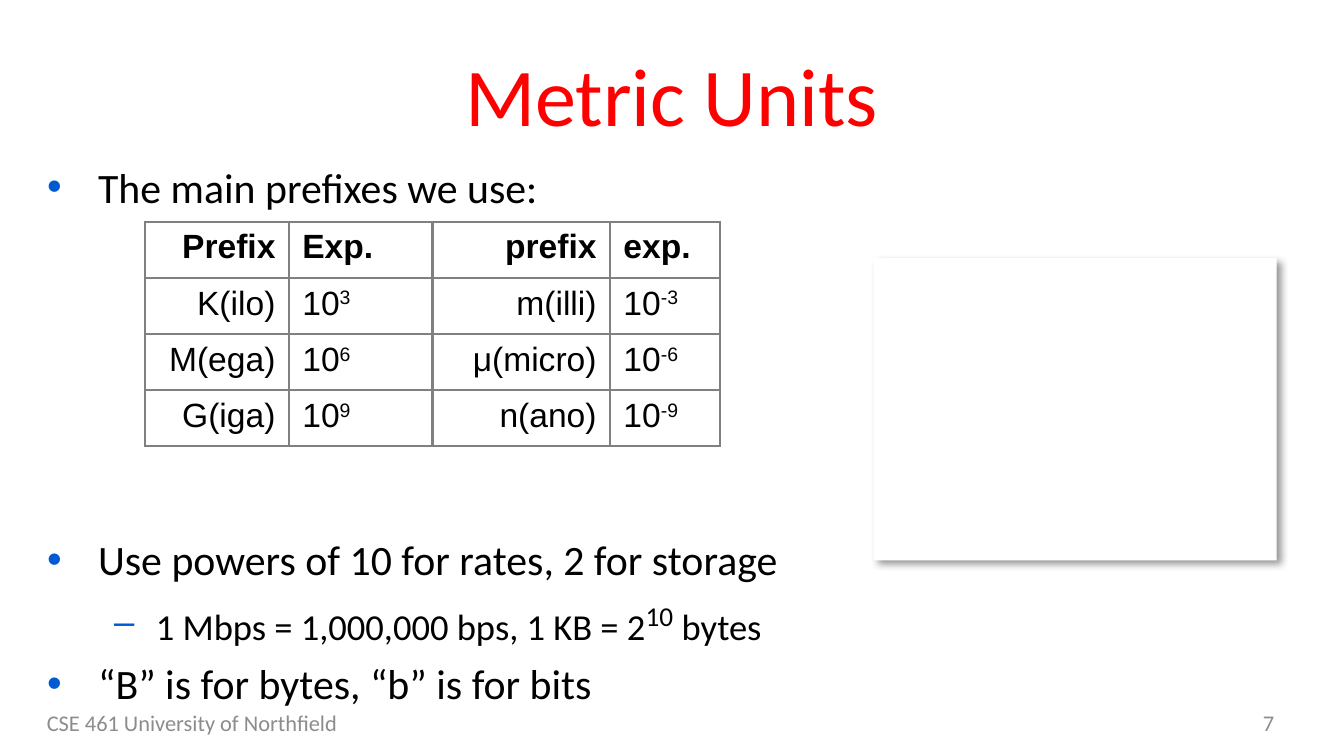
from lxml.etree import SubElement
from pptx import Presentation
from pptx.dml.color import RGBColor
from pptx.enum.shapes import MSO_SHAPE
from pptx.enum.text import MSO_ANCHOR, MSO_AUTO_SIZE, PP_ALIGN
from pptx.oxml import parse_xml
from pptx.oxml.ns import nsdecls, qn
from pptx.util import Inches, Pt


def color(hex_string):
    return RGBColor.from_string(hex_string)


def write(paragraph, text, size, font, hex_string, bold=False, raised_size=None):
    """Fill a paragraph; parts between ^ marks become superscript."""
    for index, part in enumerate(text.split("^")):
        if not part:
            continue
        raised = index % 2 == 1
        run = paragraph.add_run()
        run.text = part
        run.font.size = Pt(raised_size if raised and raised_size else size)
        run.font.name = font
        run.font.bold = bold
        run.font.color.rgb = color(hex_string)
        if raised:
            run._r.get_or_add_rPr().set("baseline", "30000")


# A 16:9 slide
presentation = Presentation()
presentation.slide_width = Inches(10)
presentation.slide_height = Inches(10 * 9 / 16)
slide = presentation.slides.add_slide(presentation.slide_layouts[1])

# White panel with a soft shadow
panel = slide.shapes.add_shape(
    MSO_SHAPE.RECTANGLE, Inches(6.5), Inches(1.92), Inches(3), Inches(2.25))
panel.fill.solid()
panel.fill.fore_color.rgb = color("FFFFFF")
panel.line.fill.background()
panel._element.spPr.append(parse_xml(
    f'<a:effectLst {nsdecls("a")}>'
    f'<a:outerShdw blurRad="{Pt(4)}" dist="{Pt(3)}" dir="2700000" algn="tl" rotWithShape="0">'
    '<a:srgbClr val="000000"><a:alpha val="40000"/></a:srgbClr>'
    '</a:outerShdw></a:effectLst>'))

# Footer and slide number
for text, left, width, alignment in [
    ("CSE 461 University of Northfield", 0.25, 3.17, PP_ALIGN.LEFT),
    ("7", 7.25, 2.33, PP_ALIGN.RIGHT),
]:
    footer = slide.shapes.add_textbox(Inches(left), Inches(5.23), Inches(width), Inches(0.3))
    footer.text_frame.word_wrap = True
    footer.text_frame.vertical_anchor = MSO_ANCHOR.MIDDLE
    paragraph = footer.text_frame.paragraphs[0]
    paragraph.alignment = alignment
    write(paragraph, text, 12, "Calibri", "8C8C8C")

# Title
title = slide.shapes.title
title.left, title.top, title.width, title.height = (
    Inches(0.25), Inches(0.23), Inches(9.5), Inches(0.94))
title.text_frame.vertical_anchor = MSO_ANCHOR.MIDDLE
title.text_frame.auto_size = MSO_AUTO_SIZE.NONE
paragraph = title.text_frame.paragraphs[0]
paragraph.alignment = PP_ALIGN.CENTER
write(paragraph, "Metric Units", 44, "Calibri", "FF0000")

# Bullet list, with room for the table after the first item
body = slide.placeholders[1]
body.left, body.top, body.width, body.height = (
    Inches(0.25), Inches(1.15), Inches(6.25), Inches(3.92))
body.text_frame.auto_size = MSO_AUTO_SIZE.NONE
level_styles = [("•", 0.38, 0.38, 22.4), ("–", 0.81, 0.31, 19.6)]
bullets = [
    (0, 0, "The main prefixes we use:"),
    (0, 172.5, "Use powers of 10 for rates, 2 for storage"),
    (1, 5.5, "1 Mbps = 1,000,000 bps, 1 KB = 2^10^ bytes"),
    (0, 4.2, "“B” is for bytes, “b” is for bits"),
]
for index, (level, space_before, text) in enumerate(bullets):
    paragraph = body.text_frame.paragraphs[0] if index == 0 else body.text_frame.add_paragraph()
    mark, margin, hanging, size = level_styles[level]
    paragraph.level = level
    paragraph.space_before = Pt(space_before)
    properties = paragraph._p.get_or_add_pPr()
    properties.set("marL", str(Inches(margin)))
    properties.set("indent", str(-Inches(hanging)))
    bullet_color = SubElement(properties, qn("a:buClr"))
    SubElement(bullet_color, qn("a:srgbClr"), val="005BD3")
    SubElement(properties, qn("a:buFont"), typeface="Arial")
    SubElement(properties, qn("a:buChar"), char=mark)
    write(paragraph, text, size, "Calibri", "000000", raised_size=25.2)

# Prefix table
rows = [
    ("Prefix", "Exp.", "prefix", "exp."),
    ("K(ilo)", "10^3^", "m(illi)", "10^-3^"),
    ("M(ega)", "10^6^", "μ(micro)", "10^-6^"),
    ("G(iga)", "10^9^", "n(ano)", "10^-9^"),
]
table = slide.shapes.add_table(
    len(rows), len(rows[0]), Inches(1.08), Inches(1.65), Inches(4.28), Inches(1.67)).table
table.first_row = False
table.horz_banding = False
for column, width in zip(table.columns, [1.07, 1.07, 1.32, 0.82]):
    column.width = Inches(width)
for row_index, row in enumerate(rows):
    table.rows[row_index].height = Inches(1.67 / len(rows))
    for column_index, text in enumerate(row):
        cell = table.cell(row_index, column_index)
        paragraph = cell.text_frame.paragraphs[0]
        paragraph.alignment = PP_ALIGN.LEFT if column_index % 2 else PP_ALIGN.RIGHT
        write(paragraph, text, 18, "Arial", "000000", bold=row_index == 0)
        cell_properties = cell._tc.get_or_add_tcPr()
        for side in ("lnL", "lnR", "lnT", "lnB"):
            border = SubElement(cell_properties, qn(f"a:{side}"), w=str(Pt(1.5)))
            border_fill = SubElement(border, qn("a:solidFill"))
            SubElement(border_fill, qn("a:srgbClr"), val="808080")
        cell.fill.background()

presentation.save("out.pptx")
